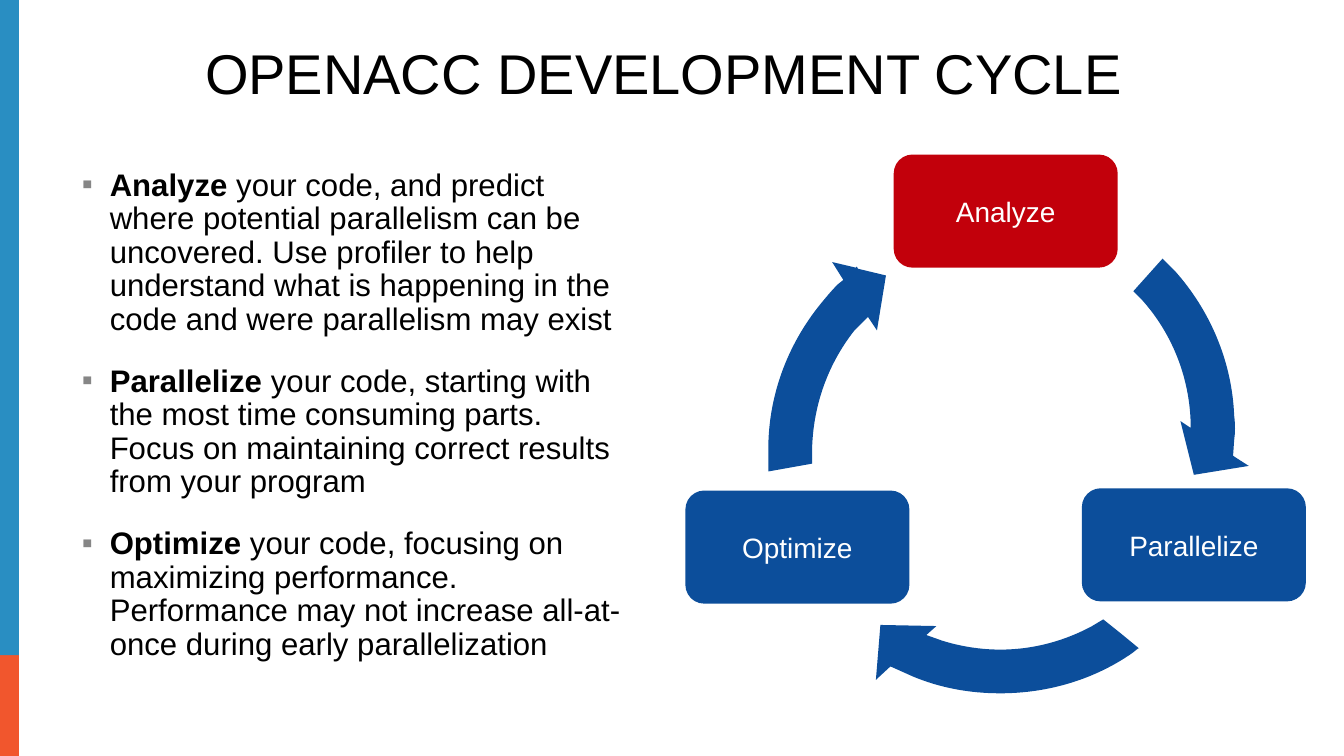
import math

from lxml import etree
from pptx import Presentation
from pptx import util as u
from pptx.dml.color import RGBColor
from pptx.enum import shapes, text
from pptx.oxml.ns import qn

BLUE = "0C4E9B"
RED = "C2000B"
BLACK = "000000"
WHITE = "FFFFFF"

STEPS = [
    ("Analyze", " your code, and predict where potential parallelism can be uncovered. "
     "Use profiler to help understand what is happening in the code and were "
     "parallelism may exist"),
    ("Parallelize", " your code, starting with the most time consuming parts. "
     "Focus on maintaining correct results from your program"),
    ("Optimize", " your code, focusing on maximizing performance. Performance may "
     "not increase all-at-once during early parallelization"),
]

NODES = [
    ("Parallelize", 9.66, 4.36, BLUE),
    ("Optimize", 6.12, 4.38, BLUE),
    ("Analyze", 7.98, 1.38, RED),
]

ARROWS = [
    (347, [(7.43, 2.34), (7.64, 2.39), (7.65, 2.38), (7.66, 2.4), (7.91, 2.46),
           (7.83, 2.95), (7.75, 2.83), (7.63, 2.95),
           (7.37, 3.28, 7.25, 3.67, 7.25, 4.06), (7.25, 4.14), (6.86, 4.21),
           (6.86, 4.01), (6.86, 3.55, 7.02, 3.09, 7.33, 2.71),
           (7.38, 2.65, 7.42, 2.6, 7.48, 2.54), (7.53, 2.5)]),
    (128, [(9.85, 5.53), (10, 5.65), (10, 5.65), (10.17, 5.79), (10.16, 5.79),
           (10.11, 5.83), (9.78, 6.06, 9.37, 6.19, 8.93, 6.19),
           (8.65, 6.19, 8.39, 6.14, 8.15, 6.04), (7.95, 5.95), (7.82, 6.07),
           (7.86, 5.58), (8.36, 5.59), (8.27, 5.67), (8.41, 5.72),
           (8.57, 5.77, 8.75, 5.8, 8.93, 5.8),
           (9.23, 5.8, 9.51, 5.72, 9.75, 5.59)]),
    (311.4, [(10.38, 2.31), (10.5, 2.43), (10.8, 2.77, 11, 3.22, 11.02, 3.71),
             (11.03, 3.79, 11.03, 3.86, 11.02, 3.93), (11.01, 4.07),
             (11.15, 4.16), (10.66, 4.24), (10.54, 3.76), (10.63, 3.82),
             (10.63, 3.74), (10.61, 3.32, 10.44, 2.94, 10.18, 2.66),
             (10.12, 2.6)]),
]


def tint(code):
    return RGBColor.from_string(code)


def paint(shape, code):
    shape.shadow.inherit = False
    shape.fill.solid()
    shape.fill.fore_color.rgb = tint(code)
    shape.line.fill.background()


def style(run, size, code, bold=False):
    run.font.name = "Arial"
    run.font.size = u.Pt(size)
    run.font.bold = bold
    run.font.color.rgb = tint(code)


def place(shape, *box):
    shape.left, shape.top, shape.width, shape.height = map(u.Inches, box)


def block(slide, kind, box, code):
    shape = slide.shapes.add_shape(kind, *map(u.Inches, box))
    paint(shape, code)
    return shape


def node(slide, label, left, top, code):
    kind = shapes.MSO_SHAPE.ROUNDED_RECTANGLE
    frame = block(slide, kind, (left, top, 2, 1.01), code).text_frame
    frame.text = label
    frame.vertical_anchor = text.MSO_ANCHOR.MIDDLE
    para = frame.paragraphs[0]
    para.alignment = text.PP_ALIGN.CENTER
    style(para.runs[0], 18, WHITE)


def turn(x, y, angle):
    cos, sin = math.cos(math.radians(angle)), math.sin(math.radians(angle))
    return x * cos - y * sin, x * sin + y * cos


def bend(shape, path):
    lines = list(shape._element.iter(qn("a:lnTo")))
    for part in path[1:]:
        count = len(part) // 2
        group, lines = lines[:count], lines[count:]
        if count == 3:
            group[0].tag = qn("a:cubicBezTo")
            for line in group[1:]:
                group[0].append(line[0])
                line.getparent().remove(line)


def arrow(slide, angle, path):
    pairs = [part[i:i + 2] for part in path for i in range(0, len(part), 2)]
    spots = [tuple(map(u.Inches, turn(x, y, -angle))) for x, y in pairs]
    pen = slide.shapes.build_freeform(*spots[0])
    pen.add_line_segments(spots[1:], close=True)
    shape = pen.convert_to_shape()
    bend(shape, path)
    x, y = turn(shape.left + shape.width / 2, shape.top + shape.height / 2, angle)
    shape.left = round(x - shape.width / 2)
    shape.top = round(y - shape.height / 2)
    shape.rotation = angle
    paint(shape, BLUE)


def bullet(para):
    props = para._p.get_or_add_pPr()
    props.set("marL", str(u.Inches(0.25)))
    props.set("indent", str(-u.Inches(0.25)))
    hue = etree.SubElement(props, qn("a:buClr"))
    etree.SubElement(hue, qn("a:srgbClr"), val="868686")
    etree.SubElement(props, qn("a:buFont"), typeface="Arial")
    etree.SubElement(props, qn("a:buChar"), char="▪")


def title(slide):
    shape = slide.shapes.title
    place(shape, 0.47, 0.35, 10.91, 0.65)
    frame = shape.text_frame
    frame.text = "OPENACC DEVELOPMENT CYCLE"
    frame.auto_size = text.MSO_AUTO_SIZE.NONE
    frame.vertical_anchor = text.MSO_ANCHOR.BOTTOM
    para = frame.paragraphs[0]
    para.alignment = text.PP_ALIGN.CENTER
    para.line_spacing = 0.9
    style(para.runs[0], 36, BLACK)


def body(slide):
    shape = slide.placeholders[1]
    place(shape, 0.63, 1.46, 5.01, 4.48)
    frame = shape.text_frame
    frame.auto_size = text.MSO_AUTO_SIZE.NONE
    frame.vertical_anchor = text.MSO_ANCHOR.TOP
    frame.margin_right = u.Inches(0.06)
    for index, (head, rest) in enumerate(STEPS):
        para = frame.add_paragraph() if index else frame.paragraphs[0]
        bullet(para)
        para.line_spacing = 0.9
        para.space_before = u.Pt(9 if index else 0)
        para.space_after = u.Pt(9)
        for words, bold in ((head, True), (rest, False)):
            run = para.add_run()
            run.text = words
            style(run, 20, BLACK, bold)


def main():
    deck = Presentation()
    deck.slide_width, deck.slide_height = u.Inches(12), u.Inches(6.75)
    slide = deck.slides.add_slide(deck.slide_layouts[1])
    bar = shapes.MSO_SHAPE.RECTANGLE
    block(slide, bar, (-0.03, 5.07, 0.2, 1.68), "F1562D")
    block(slide, bar, (-0.03, 0, 0.2, 5.85), "298EC2")
    title(slide)
    body(slide)
    for label, left, top, code in NODES[:2]:
        node(slide, label, left, top, code)
    for angle, path in ARROWS:
        arrow(slide, angle, path)
    node(slide, *NODES[2])
    deck.save("out.pptx")


if __name__ == "__main__":
    main()
